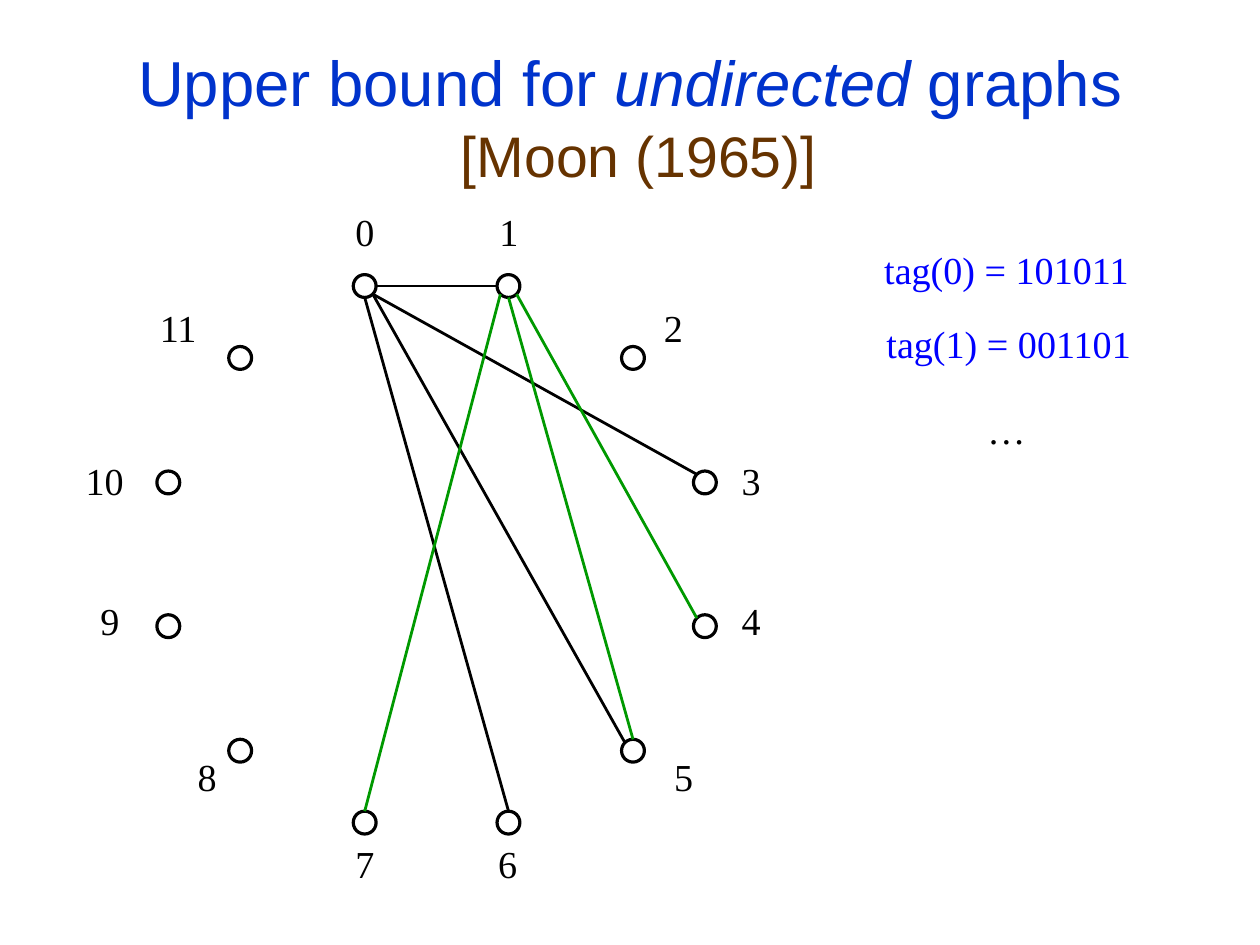
import math

import pptx
import pptx.dml.color
import pptx.enum.shapes
import pptx.enum.text
import pptx.oxml.ns
import pptx.util
from lxml import etree

Inches = pptx.util.Inches
RGBColor = pptx.dml.color.RGBColor
ALIGN = pptx.enum.text.PP_ALIGN
ANCHOR = pptx.enum.text.MSO_ANCHOR

BLACK = RGBColor(0x00, 0x00, 0x00)
GREEN = RGBColor(0x00, 0x99, 0x00)
TAG_BLUE = RGBColor(0x00, 0x00, 0xFF)
TITLE_BLUE = RGBColor(0x00, 0x33, 0xCC)
BROWN = RGBColor(0x66, 0x33, 0x00)

# The page is 28 by 21 centimetres
CM_PER_INCH = 2.54
PAGE_WIDTH = 28 / CM_PER_INCH
PAGE_HEIGHT = 21 / CM_PER_INCH

NODE_COUNT = 12
RING_RADIUS = 2.43
NODE_RADIUS = 0.1

# Left and top of each node's label within the graph's box
LABELS = [(2.36, 0), (3.62, 0), (5.06, 0.84), (5.74, 2.18), (5.74, 3.4), (5.15, 4.77),
          (3.61, 5.53), (2.36, 5.53), (0.98, 4.77), (0.13, 3.4), (0, 2.18), (0.65, 0.84)]

# Start node, angle where the edge leaves it, end node, angle where it arrives, colour
EDGES = [(0, 0, 1, 180, BLACK), (0, 45, 3, 225, BLACK),
         (0, 45, 5, 225, BLACK), (0, 90, 6, 270, BLACK),
         (1, 90, 5, 270, GREEN), (1, 45, 4, 225, GREEN), (1, 135, 7, 270, GREEN)]

TAGS = [("tag(0) = 101011", 0, 0, TAG_BLUE),
        ("tag(1) = 001101", 0.02, 0.65, TAG_BLUE),
        ("…", 0, 1.4, BLACK)]


def add_run(p, text, size=24, font="Times New Roman", color=BLACK, italic=False):
    r = p.add_run()
    r.text = text
    r.font.size = pptx.util.Pt(size)
    r.font.name = font
    r.font.color.rgb = color
    r.font.italic = italic


def add_text(s, box, text="", align=ALIGN.LEFT, **fmt):
    tf = s.shapes.add_textbox(*map(Inches, box)).text_frame
    tf.word_wrap = True
    p = tf.paragraphs[0]
    p.alignment = align
    p.line_spacing = 0.93
    if text:
        add_run(p, text, **fmt)
    return tf


def polar(center, radius, degrees):
    angle = math.radians(degrees)
    return center[0] + radius * math.cos(angle), center[1] + radius * math.sin(angle)


def add_title(s, box):
    tf = add_text(s, box, align=ALIGN.CENTER)
    tf.margin_left = tf.margin_right = tf.margin_top = tf.margin_bottom = 0
    tf.vertical_anchor = ANCHOR.MIDDLE
    p = tf.paragraphs[0]
    heading = dict(size=40, font="Arial", color=TITLE_BLUE)
    add_run(p, "Upper bound for ", **heading)
    add_run(p, "undirected", italic=True, **heading)
    add_run(p, " graphs", **heading)
    p.add_line_break()
    add_run(p, " ", **heading)
    add_run(p, "[Moon (1965)]", size=36, font="Arial", color=BROWN)


def add_node(s, center):
    x, y = center
    size = Inches(2 * NODE_RADIUS)
    sp = s.shapes.add_shape(pptx.enum.shapes.MSO_SHAPE.OVAL, Inches(x - NODE_RADIUS),
                            Inches(y - NODE_RADIUS), size, size)
    sp.shadow.inherit = False
    sp.fill.background()
    sp.line.color.rgb = BLACK
    sp.line.width = pptx.util.Pt(2)


def add_edge(s, start, end, color):
    line = s.shapes.add_connector(pptx.enum.shapes.MSO_CONNECTOR.STRAIGHT,
                                  *map(Inches, start + end))
    line.line.color.rgb = color
    line.line.width = pptx.util.Pt(1.75)
    etree.SubElement(line._element.spPr, pptx.oxml.ns.qn("a:effectLst"))


def add_graph(s, box):
    left, top, width, height = box
    # Nodes sit on a ring, clockwise from the upper left
    center = (left + 3.17, top + 3.04)
    nodes = [polar(center, RING_RADIUS, 360 / NODE_COUNT * i - 105)
             for i in range(NODE_COUNT)]
    for node in nodes:
        add_node(s, node)
    for a, leave, b, arrive, color in EDGES:
        add_edge(s, polar(nodes[a], NODE_RADIUS, leave),
                 polar(nodes[b], NODE_RADIUS, arrive), color)
    # Node numbers
    for i, (dx, dy) in enumerate(LABELS):
        label_width = 0.59 if i > 9 else 0.39
        add_text(s, (left + dx, top + dy, label_width, 0.48), str(i))


def add_tags(s, box):
    left, top, width, height = box
    for text, dx, dy, color in TAGS:
        add_text(s, (left + dx, top + dy, width, 0.48), text,
                 align=ALIGN.CENTER, color=color)


def main():
    prs = pptx.Presentation()
    prs.slide_width = Inches(PAGE_WIDTH)
    prs.slide_height = Inches(PAGE_HEIGHT)
    s = prs.slides.add_slide(prs.slide_layouts[6])
    add_graph(s, (0.65, 1.81, 6.13, 6.01))
    add_tags(s, (7.62, 2.14, 2.37, 1.88))
    add_title(s, (0, 0.43, PAGE_WIDTH, 1.25))
    prs.save("out.pptx")


if __name__ == "__main__":
    main()
